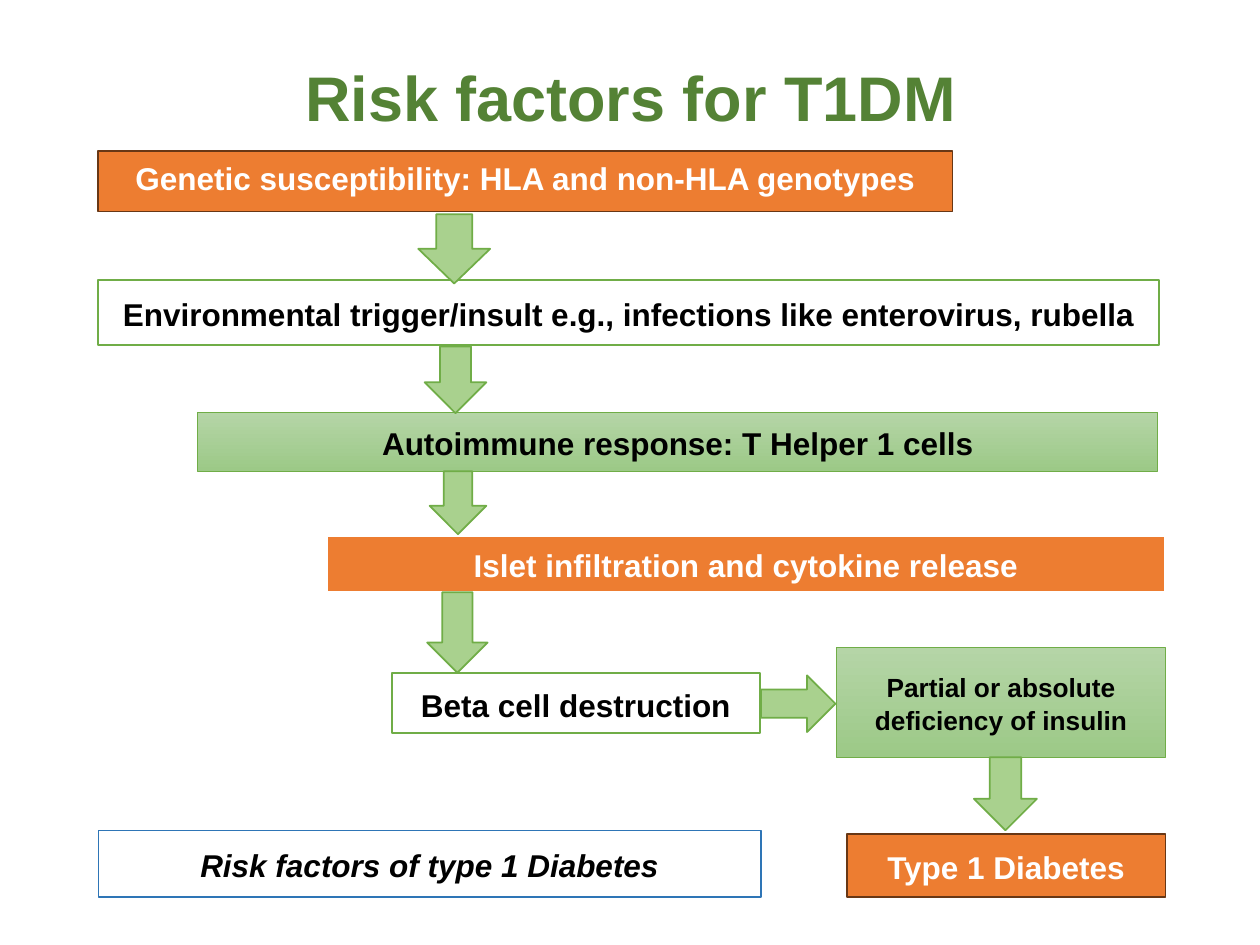
from pptx import Presentation
from pptx.dml.color import RGBColor
from pptx.enum.shapes import MSO_SHAPE
from pptx.enum.text import MSO_ANCHOR, PP_ALIGN
from pptx.util import Emu, Pt

PX = 9144  # EMU per px, at 100 px to the inch

ORANGE = RGBColor(0xED, 0x7D, 0x31)
BROWN = RGBColor(0x68, 0x37, 0x15)
GREEN = RGBColor(0x70, 0xAD, 0x47)
DARK_GREEN = RGBColor(0x54, 0x82, 0x35)
ARROW_GREEN = RGBColor(0xA9, 0xD1, 0x8E)
FADE = (RGBColor(0xB5, 0xD5, 0xA7), RGBColor(0x9C, 0xC9, 0x87))
BLUE = RGBColor(0x2E, 0x75, 0xB6)
WHITE = RGBColor(0xFF, 0xFF, 0xFF)
BLACK = RGBColor(0x00, 0x00, 0x00)

DOWN, RIGHT = MSO_SHAPE.DOWN_ARROW, MSO_SHAPE.RIGHT_ARROW

# Box (left, top, width, height), text, fill, line colour, line width, text colour
STEPS = [
    ((78, 120, 678, 48), "Genetic susceptibility: HLA and non-HLA genotypes",
     ORANGE, BROWN, 1, WHITE),
    ((78, 222, 842, 52),
     "Environmental trigger/insult e.g., infections like enterovirus, rubella",
     WHITE, GREEN, 1, BLACK),
    ((157, 327, 762, 47), "Autoimmune response: T Helper 1 cells",
     FADE, GREEN, 0.5, BLACK),
    ((259, 425, 666, 45), "Islet infiltration and cytokine release",
     ORANGE, WHITE, 1.5, WHITE),
    ((311, 534, 292, 48), "Beta cell destruction", WHITE, GREEN, 1, BLACK),
    ((664, 514, 261, 87), "Partial or absolute deficiency of insulin",
     FADE, GREEN, 0.5, BLACK),
    ((672, 662, 253, 50), "Type 1 Diabetes", ORANGE, BROWN, 1, WHITE),
]
ARROWS = [
    (DOWN, (332, 170, 57, 55)),
    (DOWN, (337, 275, 49, 53)),
    (DOWN, (341, 374, 45, 50)),
    (DOWN, (339, 470, 48, 64)),
    (RIGHT, (604, 536, 59, 45)),
    (DOWN, (773, 601, 50, 58)),
]


def to_emu(box):
    return [Emu(length * PX) for length in box]


def write(shape, text, size, color, spacing):
    """Put one bold, centred paragraph into a shape."""
    frame = shape.text_frame
    frame.word_wrap = True
    frame.vertical_anchor = MSO_ANCHOR.MIDDLE
    frame.margin_left = frame.margin_right = Emu(7 * PX)
    frame.margin_top = frame.margin_bottom = Emu(4 * PX)
    para = frame.paragraphs[0]
    para.text = text
    para.alignment = PP_ALIGN.CENTER
    para.line_spacing = spacing
    para.font.name = "Arial"
    para.font.size = Pt(size)
    para.font.bold = True
    para.font.color.rgb = color
    return para


def add_title(page, box, text):
    write(page.shapes.add_textbox(*to_emu(box)), text, 36, DARK_GREEN, 0.9)


def add_outline(page, kind, box, fill, line, line_width):
    """Add a preset shape; fill is one colour, a pair to fade, or None."""
    shape = page.shapes.add_shape(kind, *to_emu(box))
    shape.shadow.inherit = False
    if fill is None:
        shape.fill.background()
    elif fill is FADE:
        shape.fill.gradient()
        shape.fill.gradient_angle = 270
        for stop, color in zip(shape.fill.gradient_stops, FADE):
            stop.color.rgb = color
    else:
        shape.fill.solid()
        shape.fill.fore_color.rgb = fill
    shape.line.color.rgb = line
    shape.line.width = Pt(line_width)
    return shape


def add_step(page, box, text, fill, line, line_width, color, size=18):
    shape = add_outline(page, MSO_SHAPE.RECTANGLE, box, fill, line, line_width)
    para = write(shape, text, size, color, 1.07)
    para.space_after = Pt(6)
    return shape


def add_flow(page):
    for index, step in enumerate(STEPS):
        size = 15 if step[2] is FADE and index == 5 else 18
        shape = add_step(page, *step, size=size)
        if index == 0:
            shape.text_frame.vertical_anchor = MSO_ANCHOR.TOP
    for kind, box in ARROWS:
        add_outline(page, kind, box, ARROW_GREEN, GREEN, 1)


def add_caption(page, box, text):
    shape = add_step(page, box, text, None, BLUE, 0.75, BLACK)
    shape.text_frame.paragraphs[0].font.italic = True


def main():
    deck = Presentation()
    deck.slide_width, deck.slide_height = to_emu((1000, 750))
    page = deck.slides.add_slide(deck.slide_layouts[6])
    add_title(page, (135, 57, 731, 47), "Risk factors for T1DM")
    add_flow(page)
    add_caption(page, (78, 659, 526, 53), "Risk factors of type 1 Diabetes")
    deck.save("out.pptx")


if __name__ == "__main__":
    main()
